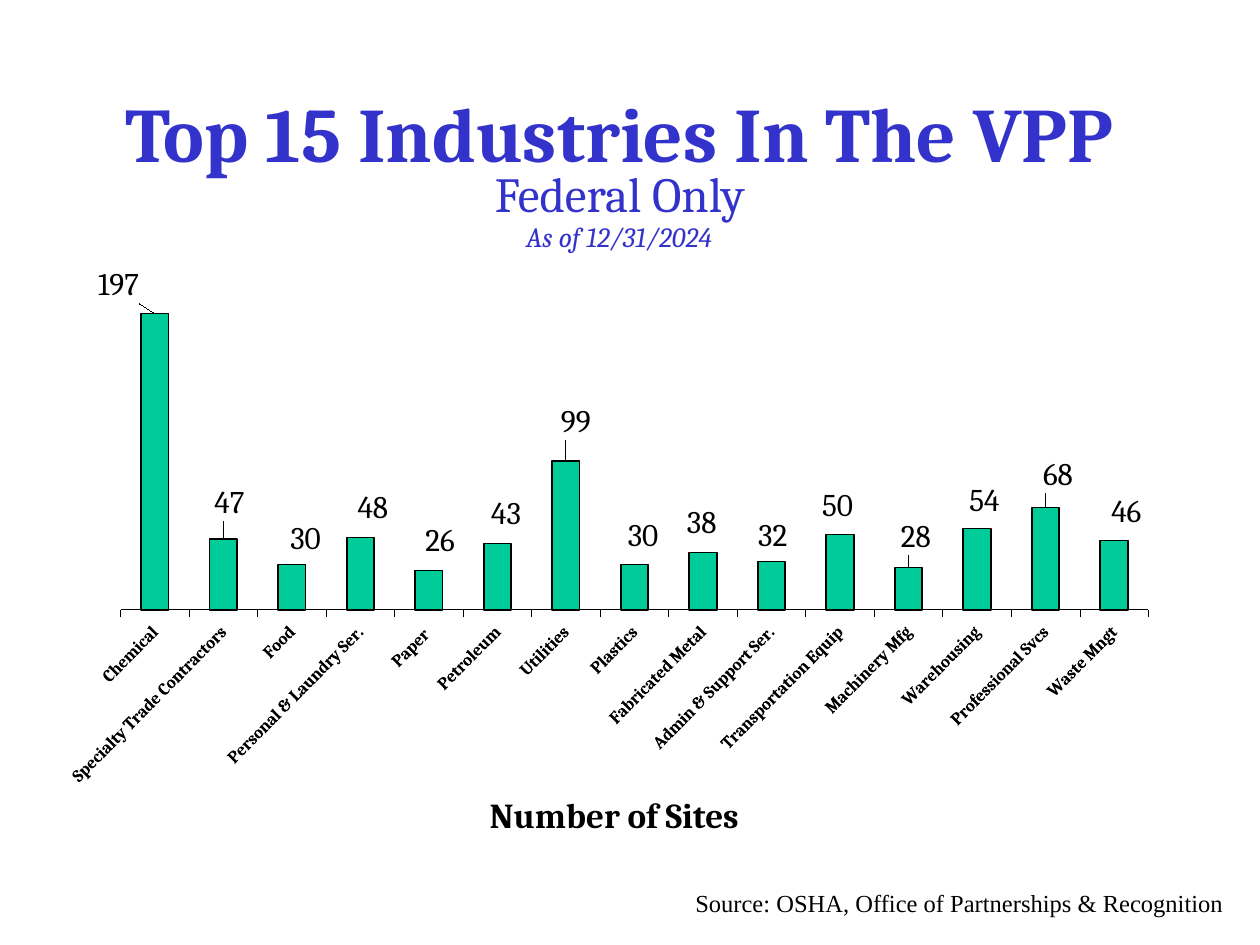
from pptx import Presentation
from pptx import util as u
from pptx.chart.data import CategoryChartData
from pptx.dml.color import RGBColor
from pptx.enum import chart as ch, text
from pptx.oxml import parse_xml
from pptx.oxml.ns import nsdecls

PX = 9144
SCALE = 914400 // 100
BLUE, BLACK, GREEN = "3333CC", "000000", "00CC99"
SERIF, PLAIN = "Cambria", "Times New Roman"
LEFT, CENTER = text.PP_ALIGN.LEFT, text.PP_ALIGN.CENTER
TOP, MIDDLE = text.MSO_ANCHOR.TOP, text.MSO_ANCHOR.MIDDLE

TITLE = "Top 15 Industries In The VPP"
TITLE_AREA = (67, 42, 850, 125)
CHART_AREA = (54, 181, 866, 459)
PLOT = {"x": 0.04, "y": 0.01, "w": 0.95, "h": 0.65}

# name, sites, label, label shift
INDUSTRIES = [
    ("Chemical", 197, "197", (-29, -4)),
    ("Specialty Trade Contractors", 47, "47", (5, -10)),
    ("Food", 30, "30", (11, -2)),
    ("Personal & Laundry Ser.", 48, "48", (10, -5)),
    ("Paper ", 26, "26", (9, -5)),
    ("Petroleum", 44, "43", (7, -5)),
    ("Utilities", 99, "99", (8, -12)),
    ("Plastics", 30, "30", (7, -4)),
    ("Fabricated Metal", 38, "38", (-1, -5)),
    ("Admin & Support Ser.", 32, "32", (1, -2)),
    ("Transportation Equip", 50, "50", (-2, -4)),
    ("Machinery Mfg", 28, "28", (6, -6)),
    ("Warehousing", 54, "54", (6, -3)),
    ("Professional Svcs", 68, "68", (10, -7)),
    ("Waste Mngt", 46, "46", (10, -4)),
]

CAPTIONS = [
    ("Number of Sites", (372, 625, 231, 77), 20, SERIF, BLACK, CENTER, TOP, False, {"bold": True}),
    ("Federal Only", (383, 125, 238, 57), 28, SERIF, BLUE, LEFT, TOP, False, {}),
    ("As of 12/31/2024", (350, 150, 283, 75), 16, SERIF, BLUE, CENTER, MIDDLE, True, {"italic": True}),
    ("Source: OSHA, Office of Partnerships & Recognition", (542, 700, 450, 74),
     14, PLAIN, BLACK, LEFT, TOP, True, {}),
]


def color(value):
    return RGBColor.from_string(value)


def emu(area):
    return [length * SCALE for length in area]


def set_font(font, name, size, tint, bold=False, italic=False):
    font.name, font.size = name, u.Pt(size)
    font.bold, font.italic = bold, italic
    font.color.rgb = color(tint)


def manual_layout(tags):
    inner = "".join(f'<c:{tag} val="{value}"/>' for tag, value in tags)
    return parse_xml(f"<c:layout {nsdecls('c')}><c:manualLayout>{inner}</c:manualLayout></c:layout>")


def add_title(slide):
    title = slide.shapes.title
    title.left, title.top, title.width, title.height = emu(TITLE_AREA)
    title.text_frame.text = TITLE
    title.text_frame.vertical_anchor = MIDDLE
    para = title.text_frame.paragraphs[0]
    para.alignment = CENTER
    set_font(para.font, SERIF, 44, BLUE, bold=True)


def add_caption(slide, words, area, size, name, tint, align, anchor, wrap, style):
    frame = slide.shapes.add_textbox(*emu(area)).text_frame
    frame.text = words
    frame.word_wrap, frame.vertical_anchor = wrap, anchor
    para = frame.paragraphs[0]
    para.alignment = align
    set_font(para.font, name, size, tint, **style)


def add_industry_chart(slide):
    data = CategoryChartData()
    data.categories = [name for name, *_ in INDUSTRIES]
    data.add_series("Series 1", [sites for _, sites, *_ in INDUSTRIES])
    chart = slide.shapes.add_chart(ch.XL_CHART_TYPE.COLUMN_CLUSTERED, *emu(CHART_AREA), data).chart
    chart.has_legend = chart.has_title = False
    set_font(chart.font, PLAIN, 18, BLACK)

    axis = chart.category_axis
    axis.major_tick_mark = ch.XL_TICK_MARK.OUTSIDE
    axis.tick_label_position = ch.XL_TICK_LABEL_POSITION.LOW
    axis.format.line.color.rgb = color(BLACK)
    axis.format.line.width = u.Pt(0.25)
    set_font(axis.tick_labels.font, SERIF, 10, BLACK, bold=True)
    axis._element.txPr.bodyPr.set("rot", "-2700000")

    scale = chart.value_axis
    scale.visible = scale.has_major_gridlines = False
    scale.minimum_scale, scale.maximum_scale = 0, 250

    area = chart._chartSpace.chart.plotArea
    for old in area.xpath("c:layout"):
        area.remove(old)
    area.insert(0, manual_layout(
        [("layoutTarget", "inner"), ("xMode", "edge"), ("yMode", "edge"), *PLOT.items()]))

    plot = chart.plots[0]
    plot.gap_width, plot.vary_by_categories = 150, False
    series = plot.series[0]
    series.format.fill.solid()
    series.format.fill.fore_color.rgb = color(GREEN)
    series.format.line.color.rgb = color(BLACK)
    series.format.line.width = u.Pt(1)
    set_font(series.data_labels.font, SERIF, 18, BLACK)
    series.data_labels.show_value = True
    for index, (_, _, words, (dx, dy)) in enumerate(INDUSTRIES):
        label = series.points[index].data_label
        label.text_frame.text = words
        set_font(label.text_frame.paragraphs[0].runs[0].font, SERIF, 18, BLACK)
        label.position = ch.XL_LABEL_POSITION.OUTSIDE_END
        element = label._get_or_add_dLbl()
        for old in element.xpath("c:layout"):
            element.remove(old)
        element.insert(1, manual_layout(
            [("x", dx / CHART_AREA[2]), ("y", dy / CHART_AREA[3])]))


def main():
    deck = Presentation()
    deck.slide_width, deck.slide_height = emu((1000, 750))
    slide = deck.slides.add_slide(deck.slide_layouts[5])
    add_title(slide)
    add_industry_chart(slide)
    for caption in CAPTIONS:
        add_caption(slide, *caption)
    deck.save("out.pptx")


if __name__ == "__main__":
    main()
